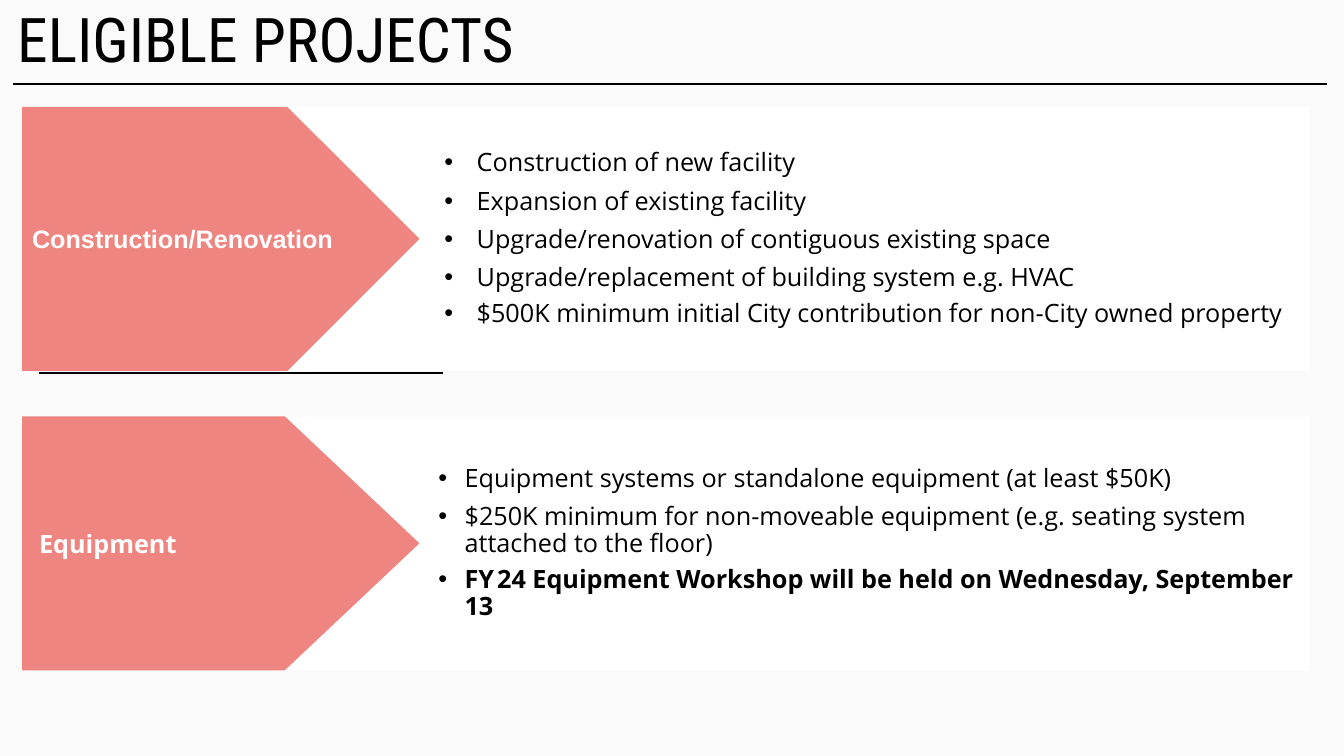
from lxml import etree
from pptx import Presentation
from pptx.dml.color import RGBColor
from pptx.enum.shapes import MSO_CONNECTOR, MSO_SHAPE
from pptx.enum.text import MSO_ANCHOR, MSO_AUTO_SIZE, PP_ALIGN
from pptx.oxml.ns import qn
from pptx.util import Inches, Pt

BLACK = RGBColor(0x00, 0x00, 0x00)
WHITE = RGBColor(0xFF, 0xFF, 0xFF)
CORAL = RGBColor(0xEE, 0x85, 0x80)
PAPER = RGBColor(0xFA, 0xFA, 0xFA)

SECTIONS = [
    {"label": "Construction/Renovation", "font": "Arial", "label_indent": 0,
     "top": 1.06, "height": 2.62, "point": 0.5, "indent": 1.81, "hang": 0.32,
     "bullets": [
         ["Construction of new facility"],
         ["Expansion of existing facility"],
         ["Upgrade/renovation of contiguous existing space"],
         ["Upgrade/replacement of building system e.g. HVAC"],
         ["$500K minimum initial City contribution for non-City owned property"]]},
    {"label": "Equipment", "font": "Open Sans", "label_indent": 0.07,
     "top": 4.13, "height": 2.52, "point": 0.53, "indent": 1.69, "hang": 0.26,
     "bullets": [
         ["Equipment systems or standalone equipment (at least $50K)"],
         ["$250K minimum for non-moveable equipment "
          "(e.g. seating system attached to the floor)"],
         ["FY", " ", "24 Equipment Workshop will be held on Wednesday, September 13"]]},
]
RULES = [(0.13, 13.16, 0.83, 1.5), (0.39, 4.39, 3.7, 1.5)]


def add_block(kind, left, top, width, height, fill, adjustment):
    s = slide.shapes.add_shape(kind, Inches(left), Inches(top), Inches(width), Inches(height))
    s.adjustments[0] = adjustment
    s.shadow.inherit = False
    s.fill.solid()
    s.fill.fore_color.rgb = fill
    s.line.fill.background()
    s.text_frame.word_wrap = True
    s.text_frame.vertical_anchor = MSO_ANCHOR.MIDDLE
    return s.text_frame


def add_run(p, text, color=BLACK, **formats):
    r = p.add_run()
    r.text = text
    r.font.color.rgb = color
    for name, value in formats.items():
        setattr(r.font, name, value)


prs = Presentation()
prs.slide_width, prs.slide_height = Inches(13.33), Inches(7.5)
slide = prs.slides.add_slide(prs.slide_layouts[5])
slide.background.fill.solid()
slide.background.fill.fore_color.rgb = PAPER

title = slide.shapes.title
title.left, title.top = Inches(0), Inches(0)
title.width, title.height = prs.slide_width, Inches(0.85)
tf = title.text_frame
tf.auto_size = MSO_AUTO_SIZE.NONE
tf.vertical_anchor = MSO_ANCHOR.MIDDLE
p = tf.paragraphs[0]
p.alignment = PP_ALIGN.LEFT
p.line_spacing = 0.9
p._p.get_or_add_pPr().set("marL", str(Inches(0.07)))
add_run(p, "ELIGIBLE PROJECTS", name="Roboto Condensed", size=Pt(44))

for x1, x2, y, weight in RULES:
    rule = slide.shapes.add_connector(
        MSO_CONNECTOR.STRAIGHT, Inches(x1), Inches(y), Inches(x2), Inches(y))
    rule.line.color.rgb = BLACK
    rule.line.width = Pt(weight)
    etree.SubElement(rule._element.spPr, qn("a:effectLst"))

for section in SECTIONS:
    top, height = section["top"], section["height"]
    tf = add_block(MSO_SHAPE.ROUNDED_RECTANGLE, 2.82, top, 10.17, height, WHITE, 0)
    last = len(section["bullets"]) - 1
    for i, parts in enumerate(section["bullets"]):
        p = tf.add_paragraph() if i else tf.paragraphs[0]
        p.alignment = PP_ALIGN.LEFT
        pPr = p._p.get_or_add_pPr()
        pPr.set("marL", str(Inches(section["indent"])))
        pPr.set("indent", str(-Inches(section["hang"])))
        color = etree.SubElement(pPr, qn("a:buClr"))
        etree.SubElement(color, qn("a:srgbClr"), val=str(BLACK))
        etree.SubElement(pPr, qn("a:buFont"), typeface="Arial")
        etree.SubElement(pPr, qn("a:buChar"), char="•")
        p.line_spacing = 0.9
        if i:
            p.space_before = Pt(6 if i == last else 8)
        for text in parts:
            add_run(p, text, name="Open Sans", size=Pt(8 if text == " " else 18),
                    bold=len(parts) > 1)

    tf = add_block(MSO_SHAPE.PENTAGON, 0.22, top, 3.94, height, CORAL, section["point"])
    p = tf.paragraphs[0]
    p.alignment = PP_ALIGN.LEFT
    p._p.get_or_add_pPr().set("marL", str(Inches(section["label_indent"])))
    add_run(p, section["label"], WHITE, name=section["font"], size=Pt(18), bold=True)

prs.save("out.pptx")
